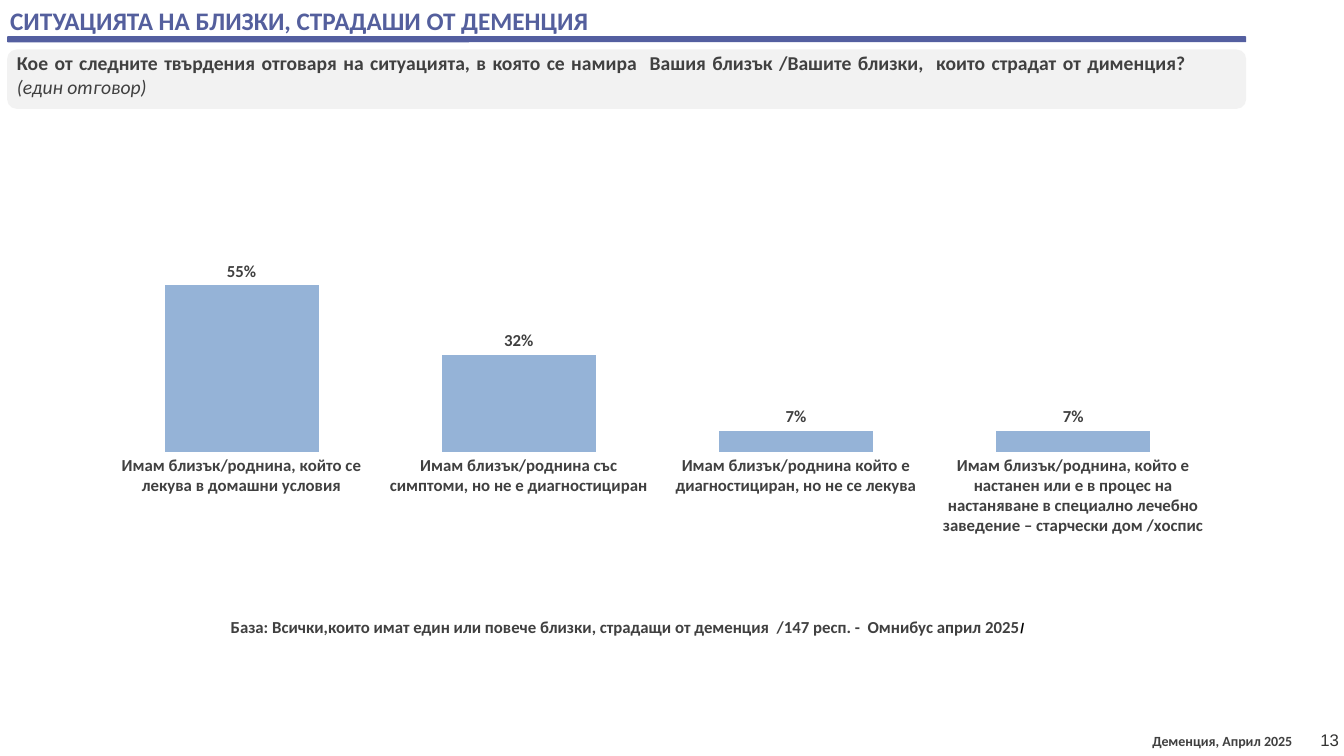
from dataclasses import dataclass

from lxml import etree
from pptx import Presentation
from pptx.chart.data import CategoryChartData
from pptx.dml.color import RGBColor
from pptx.enum.chart import XL_CHART_TYPE as ChartType
from pptx.enum.chart import XL_LABEL_POSITION as LabelPosition
from pptx.enum.chart import XL_TICK_MARK as TickMark
from pptx.enum.shapes import MSO_SHAPE as Shape
from pptx.enum.text import MSO_ANCHOR as Anchor
from pptx.enum.text import MSO_AUTO_SIZE as AutoSize
from pptx.enum.text import PP_ALIGN as Align
from pptx.oxml.ns import qn
from pptx.util import Inches, Pt

INDIGO = RGBColor(0x54, 0x5F, 0xA0)
TITLE_INDIGO = RGBColor(0x54, 0x5F, 0x9D)
PALE_GREY = RGBColor(0xF2, 0xF2, 0xF2)
DARK_GREY = RGBColor(0x40, 0x40, 0x40)
NUMBER_GREY = RGBColor(0x33, 0x33, 0x32)
BLACK = RGBColor(0, 0, 0)
SKY_BLUE = RGBColor(0x95, 0xB3, 0xD7)
PERCENT = "###0%"

ANSWERS = {
    "Имам близък/роднина, който се лекува в домашни условия": 0.55,
    "Имам близък/роднина със симптоми, но не е диагностициран": 0.32,
    "Имам близък/роднина който е диагностициран, но не се лекува": 0.07,
    "Имам близък/роднина, който е настанен или е в процес на настаняване "
    "в специално лечебно заведение – старчески дом /хоспис": 0.07,
}


@dataclass
class Box:
    left: float
    top: float
    width: float
    height: float

    def lengths(self) -> list:
        return [Inches(v) for v in (self.left, self.top, self.width, self.height)]


def style_font(font, *, size: float = 12, color: RGBColor = DARK_GREY,
               name: str = "Calibri", bold: bool = True, italic: bool = False) -> None:
    font.name, font.size = name, Pt(size)
    font.bold, font.italic = bold, italic
    font.color.rgb = color


def write(paragraph, text: str, **font_format) -> None:
    run = paragraph.add_run()
    run.text = text
    style_font(run.font, **font_format)


def add_text(slide, box: Box, text: str, *, align=Align.LEFT, wrap: bool = True,
             holder=None, **font_format):
    """Write one paragraph in a new text box or in the given placeholder."""
    if holder is None:
        holder = slide.shapes.add_textbox(*box.lengths())
    else:
        holder.left, holder.top, holder.width, holder.height = box.lengths()
    frame = holder.text_frame
    frame.word_wrap, frame.auto_size = wrap, AutoSize.NONE
    frame.vertical_anchor = Anchor.TOP
    paragraph = frame.paragraphs[0]
    paragraph.alignment = align
    write(paragraph, text, **font_format)
    return paragraph


def add_band(slide, box: Box, color: RGBColor) -> None:
    band = slide.shapes.add_shape(Shape.ROUNDED_RECTANGLE, *box.lengths())
    band.shadow.inherit = False
    band.fill.solid()
    band.fill.fore_color.rgb = color
    band.line.fill.background()


def place_plot(chart, x: float, y: float, w: float, h: float) -> None:
    """Fix the inner plot area as fractions of the chart."""
    plot_area = chart.plots[0]._element.getparent()
    for old in plot_area.findall(qn("c:layout")):
        plot_area.remove(old)
    layout = etree.Element(qn("c:layout"))
    manual = etree.SubElement(layout, qn("c:manualLayout"))
    settings = {"layoutTarget": "inner", "xMode": "edge", "yMode": "edge",
                "x": x, "y": y, "w": w, "h": h}
    for tag, value in settings.items():
        etree.SubElement(manual, qn(f"c:{tag}")).set("val", str(value))
    plot_area.insert(0, layout)


def add_answers_chart(slide, box: Box) -> None:
    answers = CategoryChartData(number_format=PERCENT)
    answers.categories = list(ANSWERS)
    answers.add_series("Series 1", list(ANSWERS.values()))
    chart = slide.shapes.add_chart(ChartType.COLUMN_CLUSTERED, *box.lengths(), answers).chart
    chart.has_title = chart.has_legend = False
    style_font(chart.font, size=10, color=BLACK, name="Arial", bold=False)

    # Axes
    situations, shares = chart.category_axis, chart.value_axis
    situations.major_tick_mark = situations.minor_tick_mark = TickMark.NONE
    situations.format.line.fill.background()
    style_font(situations.tick_labels.font)
    shares.minimum_scale, shares.maximum_scale = 0, 1
    shares.has_major_gridlines = False
    shares.tick_labels.number_format = PERCENT
    shares.tick_labels.number_format_is_linked = False
    shares.visible = False

    # Columns and their labels
    columns = chart.plots[0]
    columns.gap_width = 80
    columns.vary_by_categories = False
    fill = columns.series[0].format.fill
    fill.solid()
    fill.fore_color.rgb = SKY_BLUE
    labels = columns.series[0].data_labels
    labels.show_value = True
    labels.number_format, labels.number_format_is_linked = PERCENT, False
    labels.position = LabelPosition.OUTSIDE_END
    style_font(labels.font)
    place_plot(chart, 0.03, 0.045, 0.94, 0.725)


def main() -> None:
    prs = Presentation()
    prs.slide_width, prs.slide_height = Inches(13.33), Inches(7.5)
    slide = prs.slides.add_slide(prs.slide_layouts[5])

    # Heading
    add_band(slide, Box(0.07, 0.36, 12.29, 0.06), INDIGO)
    add_band(slide, Box(0.07, 0.49, 12.29, 0.59), PALE_GREY)
    add_text(slide, Box(0, 0, 11.8, 0.4), "СИТУАЦИЯТА НА БЛИЗКИ, СТРАДАШИ ОТ ДЕМЕНЦИЯ",
             holder=slide.shapes.title, size=18, color=TITLE_INDIGO)

    # Survey question
    question = add_text(
        slide, Box(0.07, 0.46, 11.8, 0.57),
        "Кое от следните твърдения отговаря на ситуацията, в която се намира  "
        "Вашия близък /Вашите близки,  които страдат от дименция? ",
        align=Align.JUSTIFY, size=14)
    question.space_after = Pt(6)
    write(question, "(един отговор)", size=14, bold=False, italic=True)

    # Answers and their base
    add_answers_chart(slide, Box(0.67, 1.29, 11.7, 4.15))
    base = add_text(
        slide, Box(2.19, 6.07, 8.34, 0.47),
        "База: Всички,които имат един или повече близки, страдащи от деменция  "
        "/147 респ. -  Омнибус април 2025", wrap=False)
    write(base, "/", size=10, color=BLACK, name="Arial")

    # Footer
    add_text(slide, Box(11.33, 7.22, 1.71, 0.27), "Деменция, Април 2025", size=10)
    add_text(slide, Box(10.55, 7.19, 2.83, 0.28), "13", align=Align.RIGHT,
             color=NUMBER_GREY, name="Arial", bold=False)

    prs.save("out.pptx")


if __name__ == "__main__":
    main()
